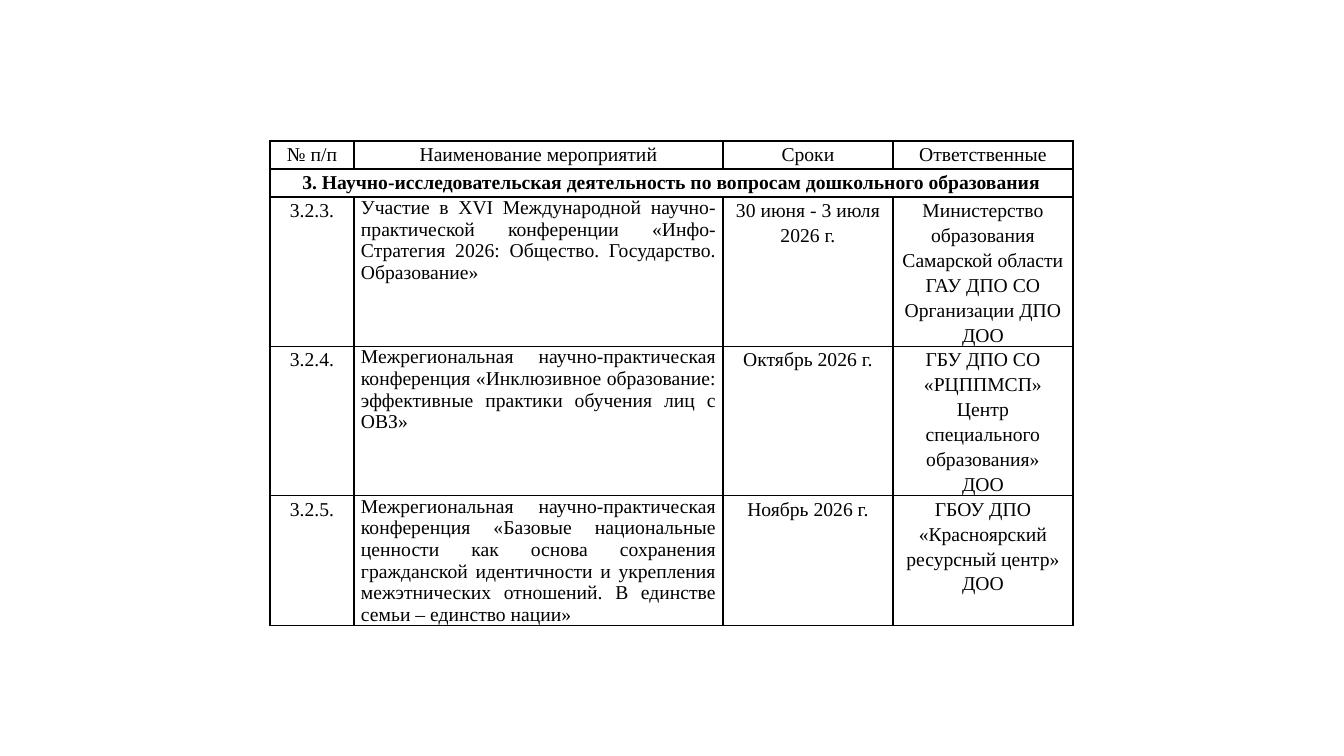
from dataclasses import dataclass

from lxml.etree import SubElement as Sub
from pptx import Presentation
from pptx.dml.color import RGBColor as Rgb
from pptx.enum.text import MSO_ANCHOR as Anchor, PP_ALIGN as Align
from pptx.oxml.ns import qn
from pptx.util import Emu, Pt

SCALE = 914400 / 100.8


def px(num):
    return Emu(round(num * SCALE))


@dataclass(frozen=True)
class Theme:
    font: str = "Times New Roman"
    size: int = 14
    ink: str = "000000"
    paper: str = "FFFFFF"
    rule: int = 1
    lead: float = 1.15
    pad: int = 7


def write(frame, text, *, theme, align=Align.CENTER, lead=None, bold=False):
    frame.word_wrap = True
    for num, line in enumerate(text.split("\n")):
        para = frame.add_paragraph() if num else frame.paragraphs[0]
        para.alignment = align
        if lead:
            para.line_spacing = lead
        run = para.add_run()
        run.text = line
        font = run.font
        font.name, font.size, font.bold = theme.font, Pt(theme.size), bold
        font.color.rgb = Rgb.from_string(theme.ink)


class Deck:
    """Hold the style and the current slide, and draw elements on it."""

    def __init__(self, theme, wide, high):
        self.theme = theme
        self.show = Presentation()
        self.show.slide_width, self.show.slide_height = px(wide), px(high)
        self.slide = self.show.slides.add_slide(self.show.slide_layouts[6])

    def grid(self, left, top, cols, rows):
        shape = self.slide.shapes.add_table(
            len(rows), len(cols), px(left), px(top), px(sum(cols)), px(sum(rows)))
        table = shape.table
        table.first_row = table.horz_banding = False
        for col, wide in zip(table.columns, cols):
            col.width = px(wide)
        for row, high in zip(table.rows, rows):
            row.height = px(high)
        for cell in table.iter_cells():
            self.frame(cell)
        return table

    def frame(self, cell):
        cell.margin_left = cell.margin_right = px(self.theme.pad)
        cell.margin_top = cell.margin_bottom = 0
        cell.vertical_anchor = Anchor.TOP
        props = cell._tc.get_or_add_tcPr()
        for side in ("lnL", "lnR", "lnT", "lnB"):
            line = Sub(props, qn(f"a:{side}"), w=str(Pt(self.theme.rule)))
            fill = Sub(line, qn("a:solidFill"))
            Sub(fill, qn("a:srgbClr"), val=self.theme.ink)
        cell.fill.background()

    def cell(self, cell, text, paper=False, **style):
        if paper:
            cell.fill.solid()
            cell.fill.fore_color.rgb = Rgb.from_string(self.theme.paper)
        write(cell.text_frame, text, theme=self.theme, **style)

    def save(self):
        self.show.save("out.pptx")


HEADS = ("№ п/п", "Наименование мероприятий", "Сроки", "Ответственные")
PART = "3. Научно-исследовательская деятельность по вопросам дошкольного образования"
EVENTS = (
    ("3.2.3.",
     "Участие в XVI Международной научно-практической конференции "
     "«Инфо-Стратегия 2026: Общество. Государство. Образование»",
     "30 июня - 3 июля 2026 г.",
     "Министерство образования Самарской области\n"
     "ГАУ ДПО СО Организации ДПО\nДОО"),
    ("3.2.4.",
     "Межрегиональная научно-практическая конференция «Инклюзивное "
     "образование: эффективные практики обучения лиц с ОВЗ»",
     "Октябрь 2026 г.",
     "ГБУ ДПО СО «РЦППМСП» Центр специального образования»\nДОО"),
    ("3.2.5.",
     "Межрегиональная научно-практическая конференция «Базовые "
     "национальные ценности как основа сохранения гражданской идентичности "
     "и укрепления межэтнических отношений. В единстве семьи – единство нации»",
     "Ноябрь 2026 г.",
     "ГБОУ ДПО «Красноярский ресурсный центр»\nДОО"),
)


def main():
    theme = Theme()
    deck = Deck(theme, 1344, 756)
    plan = deck.grid(270, 141, (84, 369, 170, 180), (28, 28, 149, 149, 130))
    for col, head in enumerate(HEADS):
        deck.cell(plan.cell(0, col), head, lead=theme.lead)
    plan.cell(1, 0).merge(plan.cell(1, len(HEADS) - 1))
    deck.cell(plan.cell(1, 0), PART, lead=theme.lead, bold=True)
    for row, event in enumerate(EVENTS, 2):
        for col, text in enumerate(event):
            name = col == 1
            deck.cell(plan.cell(row, col), text, paper=col < 2,
                      align=Align.JUSTIFY if name else Align.CENTER,
                      lead=None if name else theme.lead)
    deck.save()


if __name__ == "__main__":
    main()
